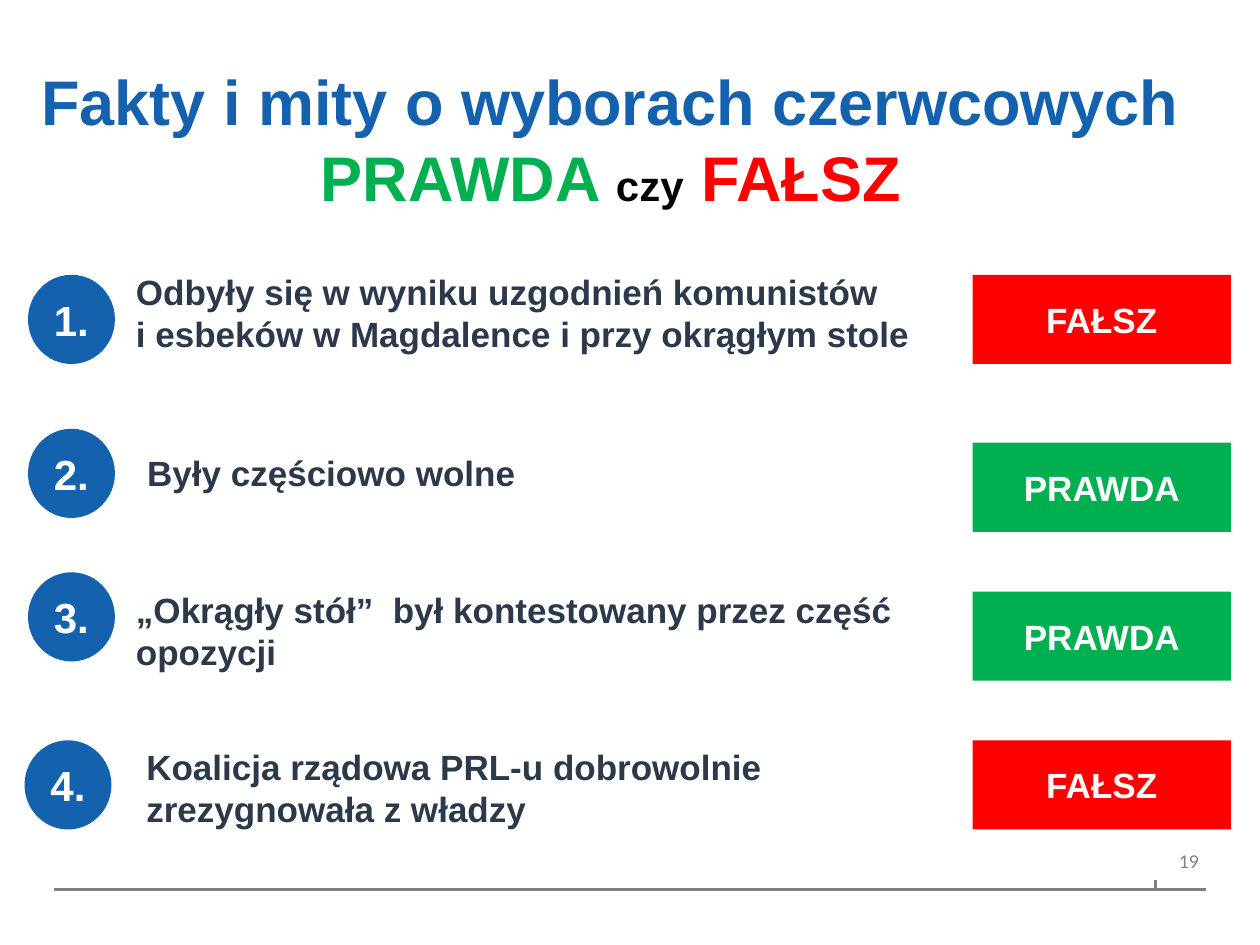
import pptx
import pptx.dml.color
import pptx.enum.shapes
import pptx.enum.text
import pptx.oxml.ns
import pptx.oxml.xmlchemy
import pptx.util

Pt = pptx.util.Pt
SHAPES = pptx.enum.shapes.MSO_SHAPE
ANCHOR = pptx.enum.text.MSO_ANCHOR
ALIGN = pptx.enum.text.PP_ALIGN

BLUE, GREEN, RED = "1461AE", "00B050", "FF0000"
WHITE, GREY, DARK = "FFFFFF", "808080", "2B394A"


def color(hex_string):
    return pptx.dml.color.RGBColor.from_string(hex_string)


def add_label(kind, box, fill, text, size, font_color, align, anchor):
    """Add a filled shape with one bold Arial paragraph."""
    shape = slide.shapes.add_shape(kind, *[Pt(length) for length in box])
    shape.shadow.inherit = False
    shape.fill.solid()
    shape.fill.fore_color.rgb = color(fill)
    shape.line.fill.background()
    frame = shape.text_frame
    frame.word_wrap = True
    frame.vertical_anchor = anchor
    paragraph = frame.paragraphs[0]
    paragraph.text = text
    paragraph.alignment = align
    paragraph.font.name = "Arial"
    paragraph.font.size = Pt(size)
    paragraph.font.bold = True
    paragraph.font.color.rgb = color(font_color)
    return shape


presentation = pptx.Presentation()
presentation.slide_width = Pt(720)
presentation.slide_height = Pt(540)
slide = presentation.slides.add_slide(presentation.slide_layouts[5])

# Footer rule with its tick and the page number
for ends in [(689, 508.3, 31, 508.3), (660.2, 485.3, 660.2, 508.3)]:
    line = slide.shapes.add_connector(
        pptx.enum.shapes.MSO_CONNECTOR.STRAIGHT, *[Pt(end) for end in ends])
    line.line.color.rgb = color(GREY)
    line.line.width = Pt(2)
    line._element.spPr.append(pptx.oxml.xmlchemy.OxmlElement("a:effectLst"))

page_number = slide.shapes.add_textbox(Pt(666.7), Pt(483), Pt(45.4), Pt(36))
page_number.text_frame.word_wrap = True
paragraph = page_number.text_frame.paragraphs[0]
paragraph.text = "19"
paragraph.font.name = "Lato"
paragraph.font.size = Pt(10)
paragraph.font.color.rgb = color(GREY)

# Title
title = slide.shapes.title
title.left, title.top, title.width, title.height = Pt(16.5), Pt(31.7), Pt(695), Pt(94.3)
frame = title.text_frame
frame.word_wrap = True
frame.auto_size = pptx.enum.text.MSO_AUTO_SIZE.NONE
frame.vertical_anchor = ANCHOR.TOP
title_lines = [
    (ALIGN.LEFT, [("Fakty i mity o wyborach czerwcowych", 36, BLUE)]),
    (ALIGN.CENTER, [("PRAWDA ", 36, GREEN), ("czy", 24, "000000"),
                    (" ", 36, BLUE), ("FAŁSZ", 36, RED)]),
]
for index, (align, runs) in enumerate(title_lines):
    paragraph = frame.add_paragraph() if index else frame.paragraphs[0]
    paragraph.alignment = align
    paragraph.line_spacing = Pt(43.5)
    paragraph.space_before = Pt(0)
    paragraph.font.name = "Arial"
    paragraph.font.bold = True
    for text, size, run_color in runs:
        run = paragraph.add_run()
        run.text = text
        run.font.size = Pt(size)
        run.font.color.rgb = color(run_color)
# The second line is centred a little to the left
frame.paragraphs[1]._p.get_or_add_pPr().set("marR", str(Pt(30)))

# Statements: text, its box, number position, verdict top, verdict
statements = [
    ("Odbyły się w wyniku uzgodnień komunistów\vi esbeków w Magdalence i przy okrągłym stole",
     (70.6, 151.2, 521.3, 104.4), (16, 157), 157, "FAŁSZ"),
    ("Były częściowo wolne",
     (77, 254.2, 589.7, 55.4), (16, 245), 253, "PRAWDA"),
    ("„Okrągły stół”  był kontestowany przez część\vopozycji",
     (70.6, 332.6, 589.7, 99.4), (16, 327), 338, "PRAWDA"),
    ("Koalicja rządowa PRL-u dobrowolnie\vzrezygnowała z władzy",
     (76.5, 422.6, 589.7, 80), (14, 423), 423, "FAŁSZ"),
]
verdict_colors = {"PRAWDA": GREEN, "FAŁSZ": RED}
for number, (text, box, position, verdict_top, verdict) in enumerate(statements, 1):
    statement = add_label(SHAPES.RECTANGLE, box, WHITE, text, 20, DARK,
                          ALIGN.LEFT, ANCHOR.TOP)
    statement.line.color.rgb = color(WHITE)
    statement.line.width = Pt(0.75)
    statement.text_frame.paragraphs[0].line_spacing = Pt(24)
    add_label(SHAPES.OVAL, (*position, 49.7, 51), BLUE, f"{number}.", 24, WHITE,
              ALIGN.CENTER, ANCHOR.MIDDLE)
    add_label(SHAPES.RECTANGLE, (555.8, verdict_top, 147.6, 51), verdict_colors[verdict],
              verdict, 20, WHITE, ALIGN.CENTER, ANCHOR.MIDDLE)

presentation.save("out.pptx")
